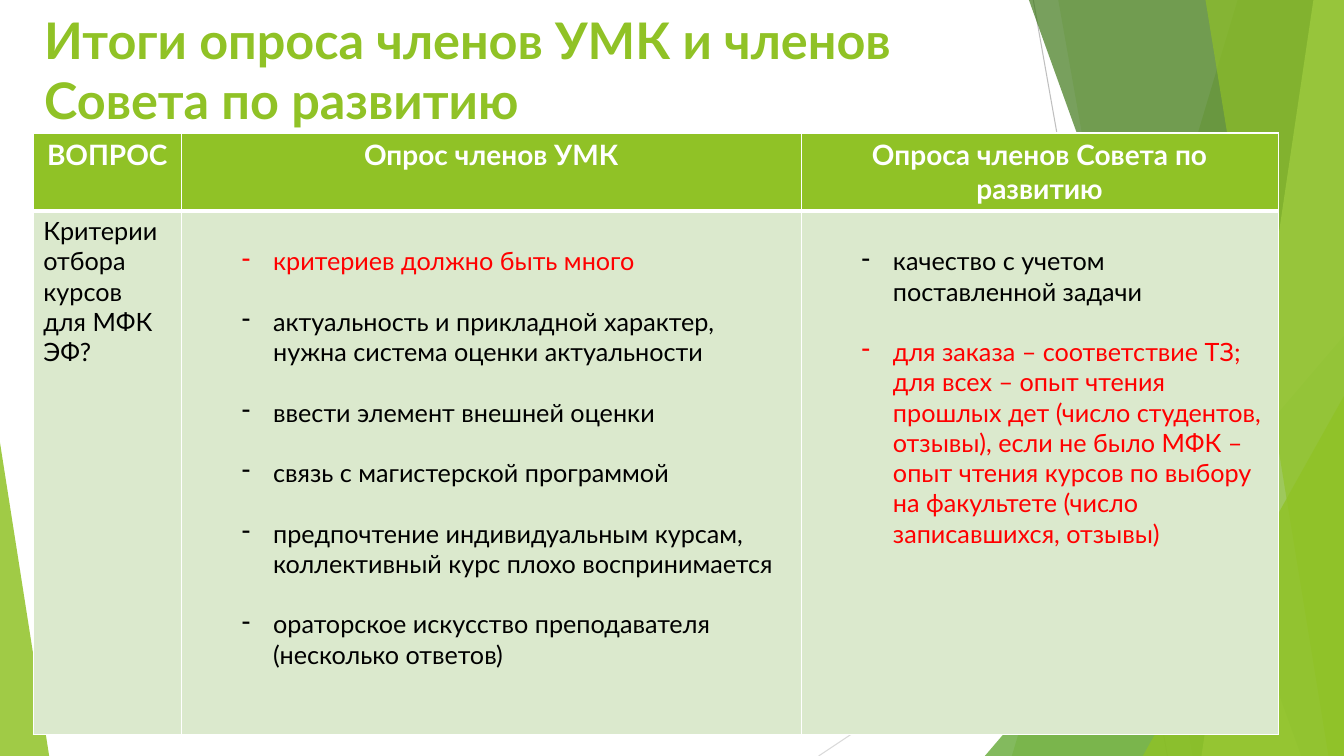
"""Build the slide comparing two surveys on course selection criteria."""
from lxml.etree import SubElement
from pptx import Presentation
from pptx.dml.color import RGBColor
from pptx.enum.shapes import MSO_CONNECTOR, MSO_SHAPE
from pptx.enum.text import MSO_ANCHOR, MSO_AUTO_SIZE, PP_ALIGN
from pptx.oxml import parse_xml
from pptx.oxml.ns import nsdecls, qn
from pptx.util import Cm, Pt

COLORS = {
    "green": "90C226", "leaf": "54A021", "forest": "3F7819", "lime": "C0E474",
    "pale": "DBE9CD", "white": "FFFFFF", "black": "000000", "red": "FF0000",
    "gray": "BFBFBF", "silver": "D9D9D9",
}
WIDTH, HEIGHT = 33.87, 19.05


def write(paragraph, text, size=18, color="black", bold=False, align=PP_ALIGN.LEFT,
          before=0, bullet=None):
    paragraph.alignment = align
    paragraph.space_before = Pt(before)
    run = paragraph.add_run()
    run.text = text
    run.font.name = "Lato"
    run.font.size = Pt(size)
    run.font.bold = bold
    run.font.color.rgb = RGBColor.from_string(COLORS[color])
    if bullet:
        paragraph.level = 1
        properties = paragraph._p.get_or_add_pPr()
        properties.set("marL", str(Cm(2.06)))
        properties.set("indent", str(Cm(-0.79)))
        SubElement(properties, qn("a:buChar"), char=bullet)


def paint(shape, color, opacity):
    shape.shadow.inherit = False
    shape.fill.solid()
    shape.fill.fore_color.rgb = RGBColor.from_string(COLORS[color])
    shape.line.fill.background()
    fill_color = shape._element.spPr.find(qn("a:solidFill"))[0]
    SubElement(fill_color, qn("a:alpha"), val=str(opacity * 1000))


presentation = Presentation()
presentation.slide_width, presentation.slide_height = Cm(WIDTH), Cm(HEIGHT)
slide = presentation.slides.add_slide(presentation.slide_layouts[5])
shapes = slide.shapes

for start_x, start_y, end_x, color in [
    (26.04, 0, 29.42, "gray"), (WIDTH, 10.24, 20.63, "silver"),
]:
    line = shapes.add_connector(
        MSO_CONNECTOR.STRAIGHT, Cm(start_x), Cm(start_y), Cm(end_x), Cm(HEIGHT))
    line.line.color.rgb = RGBColor.from_string(COLORS[color])
    line.line.width = Pt(0.75)
    SubElement(line._element.spPr, qn("a:effectLst"))

facets = [
    ("band", 31.19, 25.5, "green", 30),
    ("band", 26.67, 30.05, "green", 20),
    ("triangle", 24.82, 8.46, "leaf", 72),
    ("band", 25.93, 32.79, "forest", 70),
    ("band", 33.1, 30.28, "lime", 70),
    ("band", 30.38, 33.48, "green", 65),
    ("triangle", 28.8, 9.98, "green", 80),
    ("left triangle", 0, 11.15, "green", 85),
]
for kind, first, second, color, opacity in facets:
    if kind == "band":
        builder = shapes.build_freeform(Cm(first), 0)
        builder.add_line_segments(
            [(Cm(WIDTH), 0), (Cm(WIDTH), Cm(HEIGHT)), (Cm(second), Cm(HEIGHT))])
        facet = builder.convert_to_shape()
    else:
        on_left = kind == "left triangle"
        facet = shapes.add_shape(
            MSO_SHAPE.ISOSCELES_TRIANGLE, Cm(first), Cm(second),
            Cm(1.24 if on_left else WIDTH - first), Cm(HEIGHT - second))
        facet.adjustments[0] = 0 if on_left else 1
    paint(facet, color, opacity)

title = shapes.title
title.left, title.top, title.width, title.height = Cm(0.86), Cm(0.1), Cm(24.64), Cm(3.66)
title.text_frame.word_wrap = True
title.text_frame.auto_size = MSO_AUTO_SIZE.NONE
title.text_frame.vertical_anchor = MSO_ANCHOR.TOP
write(title.text_frame.paragraphs[0], "Итоги опроса членов УМК и членов Совета по развитию",
      size=36, color="green", bold=True)

headers = ["ВОПРОС", "Опрос членов УМК", "Опроса членов Совета по развитию"]
question = [("Критерии отбора курсов для МФК ЭФ?", "black")]
committee_answers = [
    ("критериев должно быть много", "red"),
    ("актуальность и прикладной характер, нужна система оценки актуальности", "black"),
    ("ввести элемент внешней оценки", "black"),
    ("связь с магистерской программой", "black"),
    ("предпочтение индивидуальным курсам, коллективный курс плохо воспринимается", "black"),
    ("ораторское искусство преподавателя (несколько ответов)", "black"),
]
council_answers = [
    ("качество с учетом поставленной задачи", "black"),
    ("для заказа – соответствие ТЗ; для всех – опыт чтения прошлых дет (число студентов, "
     "отзывы), если не было МФК – опыт чтения курсов по выбору на факультете (число "
     "записавшихся, отзывы)", "red"),
]

table = shapes.add_table(2, 3, Cm(0.84), Cm(3.35), Cm(31.37), Cm(15.16)).table
for column, width in zip(table.columns, [3.73, 15.62, 12.02]):
    column.width = Cm(width)
for row, height in zip(table.rows, [1.96, 13.2]):
    row.height = Cm(height)

for index, header in enumerate(headers):
    write(table.cell(0, index).text_frame.paragraphs[0], header,
          size=20, color="white", bold=True, align=PP_ALIGN.CENTER)

for index, answers in enumerate([question, committee_answers, council_answers]):
    cell = table.cell(1, index)
    if index:
        cell.margin_top = Cm(0.89)
    for number, (text, color) in enumerate(answers):
        frame = cell.text_frame
        paragraph = frame.add_paragraph() if number else frame.paragraphs[0]
        write(paragraph, text, color=color, before=21.6 if number else 0,
              bullet="-" if index else None)

for row_index, fill in enumerate(["green", "pale"]):
    for cell in table.rows[row_index].cells:
        cell.fill.solid()
        cell.fill.fore_color.rgb = RGBColor.from_string(COLORS[fill])
        for position, side in enumerate(["lnL", "lnR", "lnT", "lnB"]):
            between_rows = (row_index, side) in [(0, "lnB"), (1, "lnT")]
            border = parse_xml(
                f'<a:{side} {nsdecls("a")} w="{Pt(3 if between_rows else 1)}"><a:solidFill>'
                f'<a:srgbClr val="{COLORS["white"]}"/></a:solidFill></a:{side}>')
            cell._tc.get_or_add_tcPr().insert(position, border)

presentation.save("out.pptx")
